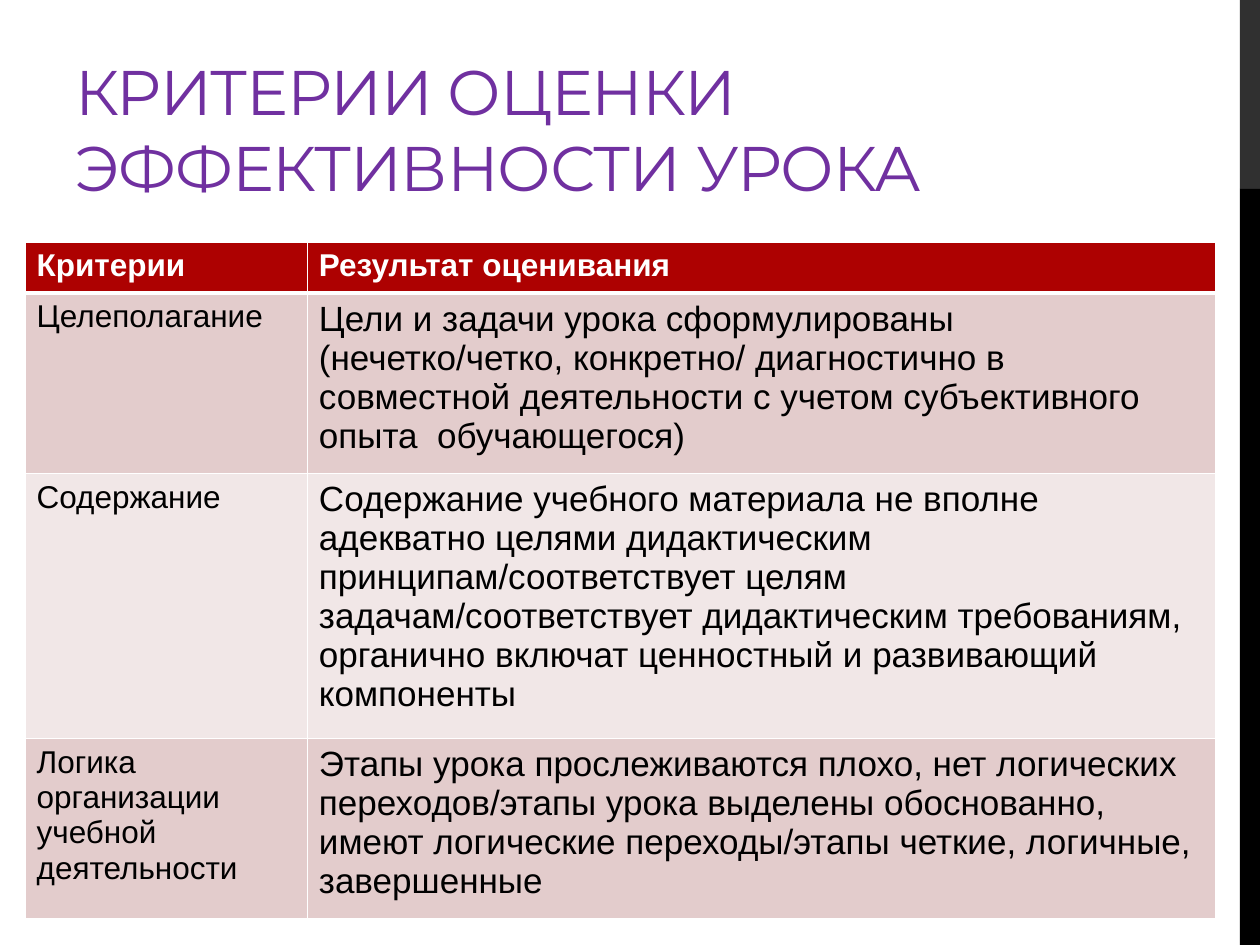
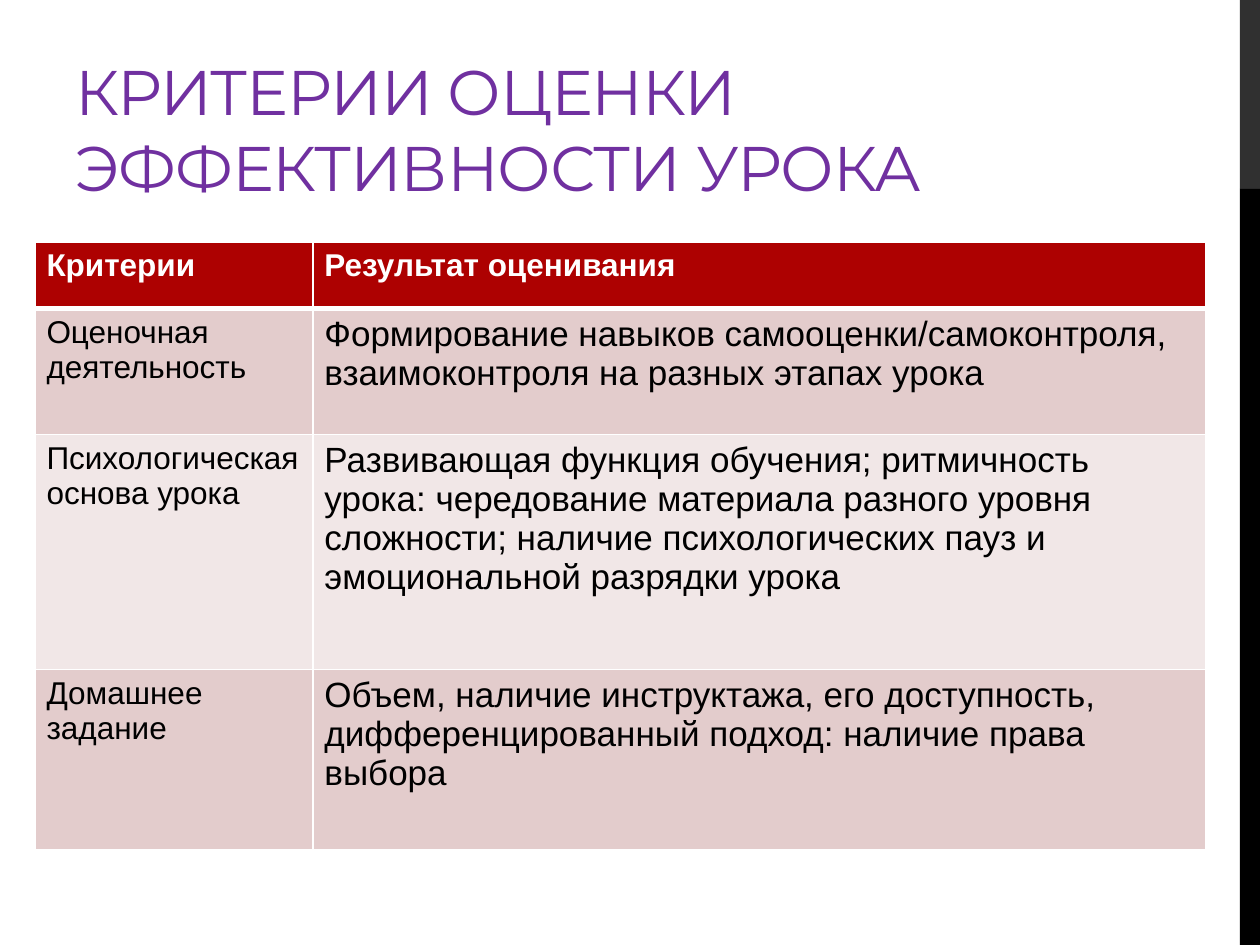
from lxml import etree
from pptx import Presentation
from pptx.dml.color import RGBColor
from pptx.enum.shapes import MSO_SHAPE as Preset
from pptx.enum.text import MSO_ANCHOR as Anchor
from pptx.oxml.ns import qn
from pptx.util import Pt

COLORS = {
    "title": "7030A0",
    "header": "AD0101",
    "odd_row": "E3CCCC",
    "even_row": "F1E7E7",
    "white": "FFFFFF",
    "black": "000000",
    "bar_top": "303030",
}
TITLE = "КРИТЕРИИ ОЦЕНКИ ЭФФЕКТИВНОСТИ УРОКА"
HEADINGS = ("Критерии", "Результат оценивания")
TITLE_FORMAT = {"name": "Montserrat", "size": Pt(36), "bold": False}
HEADER_FORMAT = {"name": "Arial", "size": Pt(18), "bold": True}
CRITERION_FORMAT = {"name": "Arial", "size": Pt(18), "bold": False}
RESULT_FORMAT = {"name": "Arial", "size": Pt(20), "bold": False}
SIDE_BARS = (("bar_top", 0, 108), ("black", 108, 432))
TABLE_TOP = 138.24

SLIDES = [
    {
        "title_width": 573,
        "left": 14.4,
        "columns": (161.3, 519.1),
        "heights": (29.2, 96, 141, 96),
        "rows": [
            ("Целеполагание",
             "Цели и задачи урока сформулированы (нечетко/четко, конкретно/ диагностично "
             "в совместной деятельности с учетом субъективного опыта  обучающегося)"),
            ("Содержание",
             "Содержание учебного материала не вполне адекватно целями дидактическим "
             "принципам/соответствует целям задачам/соответствует дидактическим "
             "требованиям, органично включат ценностный и развивающий компоненты"),
            ("Логика организации учебной деятельности",
             "Этапы урока прослеживаются плохо, нет логических переходов/этапы урока "
             "выделены обоснованно, имеют логические переходы/этапы четкие, логичные, "
             "завершенные"),
        ],
    },
    {
        "title_width": 533.5,
        "left": 20,
        "columns": (158.8, 510.2),
        "heights": (38, 72, 134.5, 103),
        "rows": [
            ("Оценочная деятельность",
             "Формирование навыков самооценки/самоконтроля, взаимоконтроля на разных "
             "этапах урока"),
            ("Психологическая основа урока",
             "Развивающая функция обучения; ритмичность урока: чередование материала "
             "разного уровня сложности; наличие психологических пауз и эмоциональной "
             "разрядки урока"),
            ("Домашнее задание",
             "Объем, наличие инструктажа, его доступность, дифференцированный подход: "
             "наличие права выбора"),
        ],
    },
]


def write_text(frame, text, font_format, color):
    frame.word_wrap = True
    run = frame.paragraphs[0].add_run()
    run.text = text
    for name, value in font_format.items():
        setattr(run.font, name, value)
    run.font.color.rgb = RGBColor.from_string(COLORS[color])
    return run


def add_borders(cell, widths):
    properties = cell._tc.get_or_add_tcPr()
    for side, width in widths.items():
        line = etree.SubElement(properties, qn(f"a:ln{side}"), w=str(Pt(width)))
        fill = etree.SubElement(line, qn("a:solidFill"))
        etree.SubElement(fill, qn("a:srgbClr"), val=COLORS["white"])


presentation = Presentation()
presentation.slide_width, presentation.slide_height = Pt(720), Pt(540)

for content in SLIDES:
    slide = presentation.slides.add_slide(presentation.slide_layouts[6])

    for color, top, height in SIDE_BARS:
        bar = slide.shapes.add_shape(Preset.RECTANGLE, Pt(708.5), Pt(top), Pt(11.5), Pt(height))
        bar.shadow.inherit = False
        bar.fill.solid()
        bar.fill.fore_color.rgb = RGBColor.from_string(COLORS[color])
        bar.line.fill.background()

    title = slide.shapes.add_textbox(Pt(36), Pt(12.2), Pt(content["title_width"]), Pt(108))
    title.text_frame.vertical_anchor = Anchor.BOTTOM
    title_run = write_text(title.text_frame, TITLE, TITLE_FORMAT, "title")
    title_run._r.get_or_add_rPr().set("spc", "-60")

    rows = [HEADINGS, *content["rows"]]
    table = slide.shapes.add_table(
        len(rows), len(HEADINGS), Pt(content["left"]), Pt(TABLE_TOP),
        Pt(sum(content["columns"])), Pt(sum(content["heights"])),
    ).table
    table.horz_banding = False
    for column, width in zip(table.columns, content["columns"]):
        column.width = Pt(width)

    for row_index, (texts, height) in enumerate(zip(rows, content["heights"])):
        table.rows[row_index].height = Pt(height)
        if row_index == 0:
            fill_color, text_color = "header", "white"
            formats = (HEADER_FORMAT, HEADER_FORMAT)
        else:
            fill_color = "odd_row" if row_index % 2 else "even_row"
            text_color = "black"
            formats = (CRITERION_FORMAT, RESULT_FORMAT)
        borders = {"L": 1, "R": 1, "T": 3 if row_index == 1 else 1, "B": 3 if row_index == 0 else 1}
        for column_index, (text, font_format) in enumerate(zip(texts, formats)):
            cell = table.cell(row_index, column_index)
            add_borders(cell, borders)
            cell.fill.solid()
            cell.fill.fore_color.rgb = RGBColor.from_string(COLORS[fill_color])
            cell.margin_left = cell.margin_right = Pt(6.6)
            write_text(cell.text_frame, text, font_format, text_color)

presentation.save("out.pptx")
